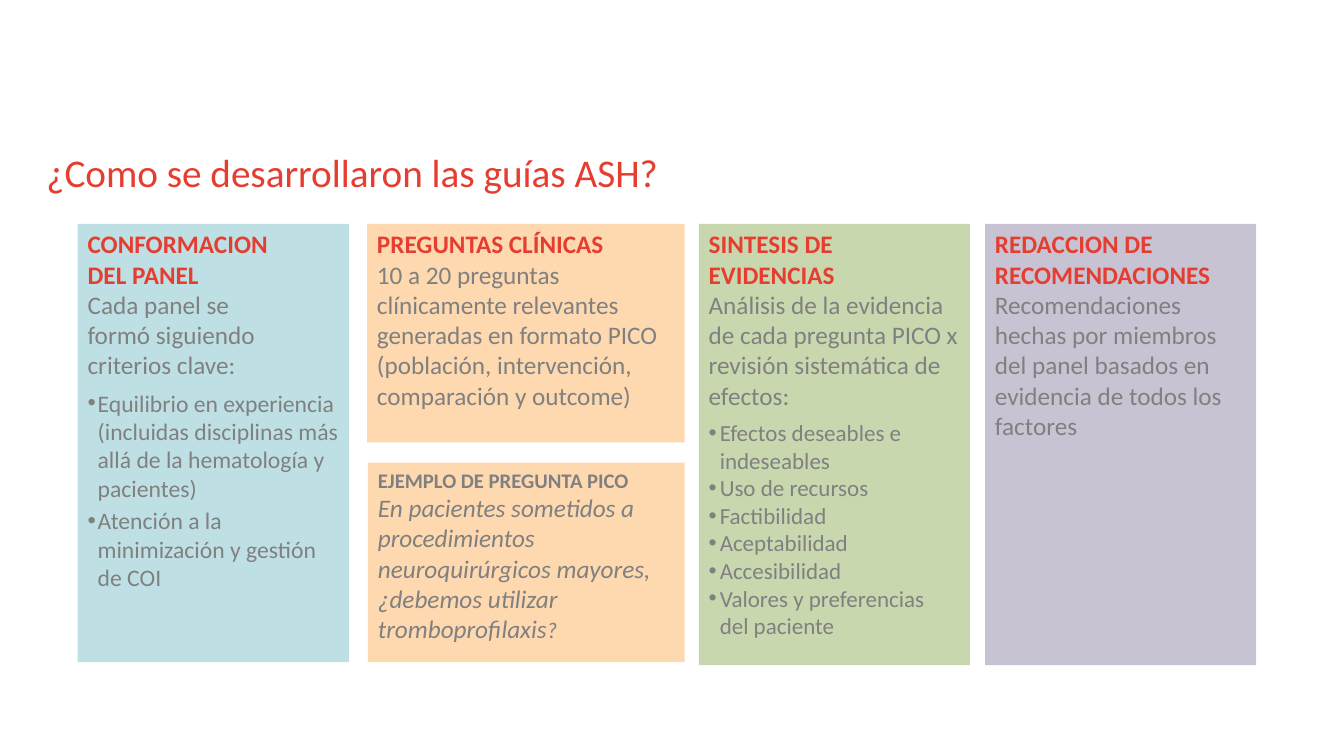
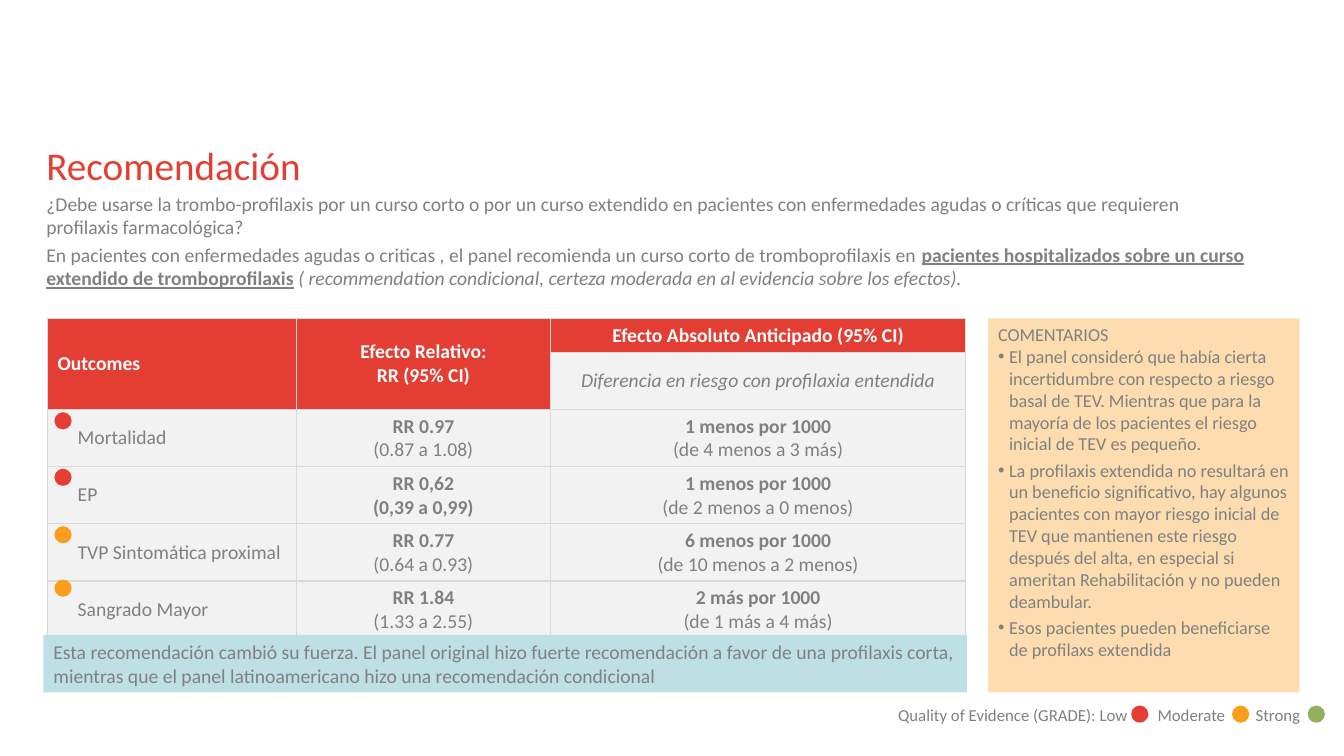
from dataclasses import dataclass, field
from typing import Any, Optional

from lxml.etree import SubElement
from pptx import Presentation
from pptx.dml.color import RGBColor
from pptx.enum.shapes import MSO_SHAPE
from pptx.enum.text import MSO_ANCHOR, MSO_AUTO_SIZE, PP_ALIGN
from pptx.oxml.ns import qn
from pptx.util import Inches, Pt

WIDE, HIGH = Inches(13.33), Inches(7.5)
HUES = {
    "title": "E53E31", "red": "E43D33", "grey": "808080", "white": "FFFFFF",
    "aqua": "BEE0E4", "peach": "FED9B0", "sage": "C9D7AF", "mauve": "8B80A3",
    "amber": "FA9D1C", "green": "91AF5F", "sand": "FDDDB0", "pale": "F2F2F2",
    "rule": "D9D9D9",
}
FORMATS = {
    "plain": {"bold": False, "italic": False},
    "bold": {"bold": True, "italic": False},
    "slant": {"bold": False, "italic": True},
    "stress": {"bold": True, "underline": True},
}
FLUSH = {"margin_left": 0, "margin_right": 0, "margin_top": 0, "margin_bottom": 0}
LEFT, TOP, DOT = 3.45, 42.13, 1.28


@dataclass(frozen=True)
class Box:
    x: float
    y: float
    w: float
    h: float

    def spot(self) -> tuple[int, int, int, int]:
        return (int(WIDE * self.x / 100), int(HIGH * self.y / 100),
                int(WIDE * self.w / 100), int(HIGH * self.h / 100))


@dataclass(frozen=True)
class Run:
    text: str
    style: str = "plain"
    size: float = 14
    hue: str = "grey"


@dataclass(frozen=True)
class Para:
    runs: list[Run]
    after: float = 0
    before: float = 0
    hang: float = 0
    align: Any = PP_ALIGN.LEFT
    tabs: list[float] = field(default_factory=list)


@dataclass(frozen=True)
class Card:
    box: Box
    hue: str
    paras: list[Para]
    alpha: Optional[int] = None


def line(text: str, size: float = 14, style: str = "plain", hue: str = "grey",
         **rest: Any) -> Para:
    return Para([Run(text, style, size, hue)], **rest)


def head(text: str) -> Para:
    return line(text, 18, "bold", "title")


def items(texts: list[str], size: float, hang: float, after: float = 0) -> list[Para]:
    return [line(text, size, hang=hang, after=after) for text in texts]


def tint(hue: str) -> RGBColor:
    return RGBColor.from_string(HUES[hue])


def assign(goal: Any, values: dict[str, Any]) -> None:
    for name, value in values.items():
        setattr(goal, name, value)


def write(frame: Any, paras: list[Para]) -> None:
    frame.word_wrap = True
    for n, para in enumerate(paras):
        block = frame.add_paragraph() if n else frame.paragraphs[0]
        props = block._p.get_or_add_pPr()
        if para.hang:
            props.set("marL", str(Inches(para.hang)))
            props.set("indent", str(-Inches(para.hang)))
            SubElement(props, qn("a:buFont"), typeface="Arial")
            SubElement(props, qn("a:buChar"), char="•")
        if para.tabs:
            stops = SubElement(props, qn("a:tabLst"))
            for stop in para.tabs:
                SubElement(stops, qn("a:tab"), pos=str(int(WIDE * stop / 100)), algn="l")
        assign(block, {"alignment": para.align, "space_before": Pt(para.before),
                       "space_after": Pt(para.after)})
        for run in para.runs:
            for k, part in enumerate(run.text.split("\n")):
                if k:
                    block.add_line_break()
                piece = block.add_run()
                piece.text = part
                assign(piece.font, {"name": "Calibri", "size": Pt(run.size),
                                    **FORMATS[run.style]})
                piece.font.color.rgb = tint(run.hue)


def shape(shapes: Any, kind: Any, box: Box, hue: str) -> Any:
    item = shapes.add_shape(kind, *box.spot())
    item.shadow.inherit = False
    item.fill.solid()
    item.fill.fore_color.rgb = tint(hue)
    item.line.fill.background()
    return item


def panel(shapes: Any, card: Card) -> None:
    item = shape(shapes, MSO_SHAPE.RECTANGLE, card.box, card.hue)
    if card.alpha:
        shade = item.element.spPr.find(".//" + qn("a:srgbClr"))
        SubElement(shade, qn("a:alpha"), val=str(card.alpha * 1000))
    item.text_frame.vertical_anchor = MSO_ANCHOR.TOP
    write(item.text_frame, card.paras)


def dot(shapes: Any, x: float, y: float, hue: str) -> None:
    shape(shapes, MSO_SHAPE.OVAL, Box(x, y, DOT, DOT * WIDE / HIGH), hue)


def label(shapes: Any, box: Box, paras: list[Para], values: dict[str, Any]) -> None:
    frame = shapes.add_textbox(*box.spot()).text_frame
    assign(frame, values)
    write(frame, paras)


def start(deck: Any, text: str, y: float) -> Any:
    slide = deck.slides.add_slide(deck.slide_layouts[5])
    title = slide.shapes.title
    spot = Box(LEFT, y, 90, 6.13).spot()
    assign(title, dict(zip(("left", "top", "width", "height"), spot)))
    assign(title.text_frame, {**FLUSH, "auto_size": MSO_AUTO_SIZE.NONE,
                              "vertical_anchor": MSO_ANCHOR.MIDDLE})
    write(title.text_frame, [line(text, 28, hue="title")])
    return slide.shapes


def paint(cell: Any, paras: list[Para], hue: str, inset: float = 0.1) -> None:
    props = cell._tc.get_or_add_tcPr()
    for side in ("a:lnL", "a:lnR", "a:lnT", "a:lnB"):
        edge = SubElement(props, qn(side), w=str(Pt(1)))
        SubElement(SubElement(edge, qn("a:solidFill")), qn("a:srgbClr"), val=HUES["rule"])
    cell.fill.solid()
    cell.fill.fore_color.rgb = tint(hue)
    assign(cell, {"vertical_anchor": MSO_ANCHOR.MIDDLE, "margin_left": Inches(inset)})
    if paras:
        write(cell.text_frame, paras)


def mid(text: str, style: str = "plain", hue: str = "grey") -> Para:
    return line(text, style=style, hue=hue, align=PP_ALIGN.CENTER)


@dataclass(frozen=True)
class Result:
    name: str
    ratio: str
    span: str
    gain: str
    limit: str
    y: float
    hue: str
    style: str = "plain"


RESULTS = [
    Result("Mortalidad", "RR 0.97", "(0.87 a 1.08)", "1 menos por 1000",
           "(de 4 menos a 3 más)", 54.53, "red"),
    Result("EP", "RR 0,62", "(0,39 a 0,99)", "1 menos por 1000",
           "(de 2 menos a 0 menos)", 62, "red", "bold"),
    Result("TVP Sintomática proximal", "RR 0.77", "(0.64 a 0.93)", "6 menos por 1000",
           "(de 10 menos a 2 menos)", 69.6, "amber"),
    Result("Sangrado Mayor", "RR 1.84", "(1.33 a 2.55)", "2 más por 1000",
           "(de 1 más a 4 más)", 76.67, "amber"),
]

CARDS = [
    Card(Box(5.78, 29.6, 20.18, 58), "aqua", [
        head("CONFORMACION \nDEL PANEL"),
        line("Cada panel se \nformó siguiendo criterios clave:", 18, after=6),
        *items(["Equilibrio en experiencia (incluidas disciplinas más allá de la "
                "hematología y pacientes)",
                "Atención a la minimización y gestión de COI"], 16.9, 0.1, 3)]),
    Card(Box(27.31, 29.6, 23.63, 28.93), "peach", [
        head("PREGUNTAS CLÍNICAS"),
        line("10 a 20 preguntas clínicamente relevantes generadas en formato PICO "
             "(población, intervención, comparación y outcome)", 18)]),
    Card(Box(51.99, 29.6, 20.18, 58.4), "sage", [
        head("SINTESIS DE EVIDENCIAS"),
        line("Análisis de la evidencia de cada pregunta PICO x revisión "
             "sistemática de efectos:", 18, after=6),
        *items(["Efectos deseables e indeseables", "Uso de recursos", "Factibilidad",
                "Aceptabilidad", "Accesibilidad",
                "Valores y preferencias \ndel paciente"], 16.4, 0.11)]),
    Card(Box(27.38, 61.2, 23.56, 26.4), "peach", [
        line("EJEMPLO DE PREGUNTA PICO", 14.8, "bold"),
        line("En pacientes sometidos a procedimientos neuroquirúrgicos mayores, "
             "¿debemos utilizar", 18, "slant"),
        Para([Run("tromboprofilaxis", "slant", 18), Run("?", "slant", 16)])]),
    Card(Box(73.29, 29.6, 20.18, 58.4), "mauve", [
        head("REDACCION DE RECOMENDACIONES"),
        line("Recomendaciones hechas por miembros del panel basados en evidencia "
             "de todos los factores", 18)], 47),
]

NOTES = [
    Card(Box(3.23, 84, 68.72, 7.6), "aqua", [
        line("Esta recomendación cambió su fuerza. El panel original hizo fuerte "
             "recomendación a favor de una profilaxis corta, mientras que el panel "
             "latinoamericano hizo una recomendación condicional")]),
    Card(Box(73.52, TOP, 23.18, 49.47), "sand", [
        line("COMENTARIOS", 13),
        *items(["El panel consideró que había cierta incertidumbre con respecto a riesgo "
                "basal de TEV. Mientras que para la mayoría de los pacientes el riesgo "
                "inicial de TEV es pequeño.",
                "La profilaxis extendida no resultará en un beneficio significativo, hay "
                "algunos pacientes con mayor riesgo inicial de TEV que mantienen este "
                "riesgo después del alta, en especial si ameritan Rehabilitación y no "
                "pueden deambular.",
                "Esos pacientes pueden beneficiarse de profilaxs extendida"],
               13, 0.11, 3)]),
]

INTRO = [
    line("¿Debe usarse la trombo-profilaxis por un curso corto o por un curso extendido "
         "en pacientes con enfermedades agudas o críticas que requieren profilaxis "
         "farmacológica?"),
    Para([Run("En pacientes con enfermedades agudas o criticas , el panel recomienda un "
              "curso corto de tromboprofilaxis en "),
          Run("pacientes hospitalizados sobre un curso extendido de tromboprofilaxis",
              "stress"),
          Run(" "),
          Run("( recommendation condicional, certeza moderada en al evidencia sobre los "
              "efectos).", "slant")], before=2.8),
]


def grid(shapes: Any) -> None:
    cols, rows = [18.53, 18.9, 30.91], [4.13, 5.07] + [7.33] * len(RESULTS)
    box = Box(3.53, TOP, sum(cols), sum(rows))
    table = shapes.add_table(len(rows), len(cols), *box.spot()).table
    assign(table, {"first_row": False, "horz_banding": False})
    for col, share in zip(table.columns, cols):
        col.width = int(WIDE * share / 100)
    for row, share in zip(table.rows, rows):
        row.height = int(HIGH * share / 100)
    for c in (0, 1):
        table.cell(0, c).merge(table.cell(1, c))
        paint(table.cell(1, c), [], "red")
    tops = [[line("Outcomes", style="bold", hue="white")],
            [mid(text, "bold", "white") for text in ("Efecto Relativo:", "RR (95% CI)")],
            [mid("Efecto Absoluto Anticipado (95% CI)", "bold", "white")]]
    for c, paras in enumerate(tops):
        paint(table.cell(0, c), paras, "red")
    paint(table.cell(1, 2),
          [mid("Diferencia en riesgo con profilaxia entendida", "slant")], "pale")
    for r, item in enumerate(RESULTS, 2):
        paint(table.cell(r, 0), [line(item.name)], "pale", 0.3)
        paint(table.cell(r, 1), [mid(item.ratio, "bold"), mid(item.span, item.style)], "pale")
        paint(table.cell(r, 2), [mid(item.gain, "bold"), mid(item.limit)], "pale")
        dot(shapes, 4.05, item.y, item.hue)


def legend(shapes: Any) -> None:
    group = shapes.add_group_shape().shapes
    label(group, Box(66.09, 92.53, 33.9, 4), [
        line("Quality of Evidence (GRADE): Low\tModerate\tStrong", 12,
             tabs=[19.3, 26.6])], {})
    for x, hue in ((84.17, "red"), (91.67, "amber"), (97.3, "green")):
        dot(group, x, 93.33, hue)


def main() -> None:
    deck = Presentation()
    assign(deck, {"slide_width": WIDE, "slide_height": HIGH})
    shapes = start(deck, "¿Como se desarrollaron las guías ASH?", 19.6)
    for card in CARDS:
        panel(shapes, card)
    shapes = start(deck, "Recomendación", 18.8)
    label(shapes, Box(LEFT, 25.33, 90, 14), INTRO, FLUSH)
    grid(shapes)
    legend(shapes)
    for card in NOTES:
        panel(shapes, card)
    deck.save("out.pptx")


if __name__ == "__main__":
    main()
